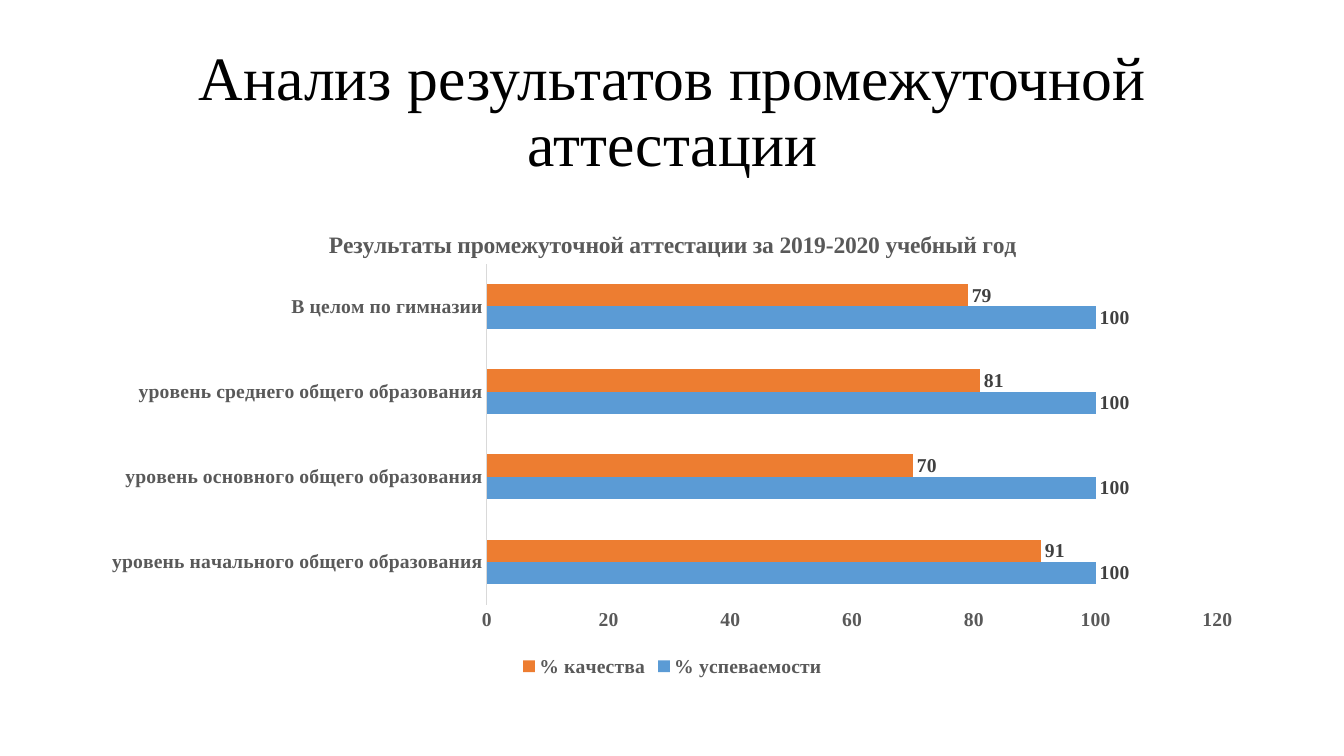
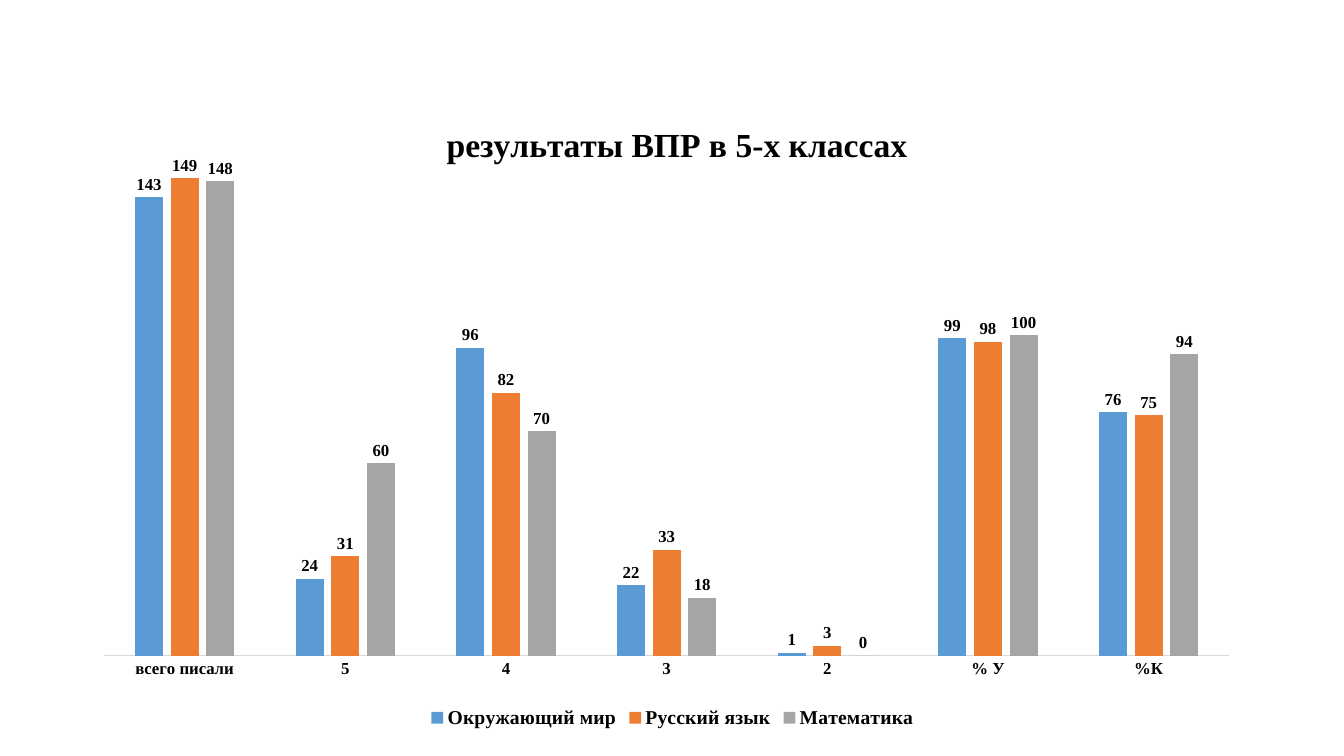
from dataclasses import dataclass

from lxml.etree import SubElement
from pptx import Presentation
from pptx.chart.data import CategoryChartData
from pptx.dml.color import RGBColor
from pptx.enum.chart import (XL_CHART_TYPE, XL_LABEL_POSITION,
                             XL_LEGEND_POSITION, XL_TICK_MARK)
from pptx.enum.text import MSO_ANCHOR, PP_ALIGN
from pptx.oxml.ns import qn
from pptx.util import Inches, Pt

TITLE_ONLY, BLANK = 5, 6


@dataclass(frozen=True)
class Theme:
    font: str = "Times New Roman"
    black: str = "000000"
    dark_gray: str = "404040"
    gray: str = "595959"
    axis_line: str = "D9D9D9"
    blue: str = "5B9BD5"
    orange: str = "ED7D31"
    silver: str = "A5A5A5"
    title_size: float = 44
    large_heading_size: float = 24
    heading_size: float = 16.8
    text_size: float = 14
    small_size: float = 12


THEME = Theme()


def set_attributes(target, values):
    for name, value in values.items():
        setattr(target, name, value)


def set_layout(parent, index, fractions, inner=False):
    """Place a chart part by fractions of the chart: x, y and optionally w, h."""
    for old_layout in parent.findall(qn("c:layout")):
        parent.remove(old_layout)
    layout = SubElement(parent, qn("c:layout"))
    parent.insert(index, layout)
    manual = SubElement(layout, qn("c:manualLayout"))
    settings = [("layoutTarget", "inner")] if inner else []
    settings += [("xMode", "edge"), ("yMode", "edge")]
    settings += zip("xywh", fractions)
    for name, value in settings:
        SubElement(manual, qn(f"c:{name}")).set("val", str(value))


class Deck:
    LEFT, WIDTH = Inches(0.92), Inches(11.5)

    def __init__(self, theme):
        self.theme = theme
        self.presentation = Presentation()
        set_attributes(self.presentation, {
            "slide_width": Inches(13.33), "slide_height": Inches(7.5)})
        self.slide = None

    def add_slide(self, layout):
        layouts = self.presentation.slide_layouts
        self.slide = self.presentation.slides.add_slide(layouts[layout])

    def style_font(self, font, size, color, bold=True):
        set_attributes(font, {
            "name": self.theme.font, "size": Pt(size), "bold": bold})
        font.color.rgb = RGBColor.from_string(color)

    def title(self, text):
        placeholder = self.slide.shapes.title
        set_attributes(placeholder, {
            "left": self.LEFT, "top": Inches(0.4),
            "width": self.WIDTH, "height": Inches(1.45)})
        frame = placeholder.text_frame
        set_attributes(frame, {
            "text": text, "word_wrap": True,
            "vertical_anchor": MSO_ANCHOR.MIDDLE})
        paragraph = frame.paragraphs[0]
        set_attributes(paragraph, {
            "alignment": PP_ALIGN.CENTER, "line_spacing": 0.9})
        self.style_font(paragraph.runs[0].font, self.theme.title_size,
                        self.theme.black, bold=False)

    def chart(self, kind, top, height, categories, series, bars, plot_layout):
        """Add a clustered chart; series holds (name, color, values) rows."""
        data = CategoryChartData(number_format="0")
        data.categories = categories
        for name, _, values in series:
            data.add_series(name, values)
        chart = self.slide.shapes.add_chart(
            kind, self.LEFT, Inches(top), self.WIDTH, Inches(height),
            data).chart
        plot = chart.plots[0]
        set_attributes(plot, {"vary_by_categories": False, **bars})
        for bar_series, (_, color, _) in zip(plot.series, series):
            bar_series.invert_if_negative = False
            bar_series.format.fill.solid()
            bar_series.format.fill.fore_color.rgb = RGBColor.from_string(color)
        set_layout(chart._chartSpace.chart.plotArea, 0, plot_layout, inner=True)
        return chart

    def chart_heading(self, chart, text, size, color, position):
        chart.has_title = True
        heading = chart.chart_title
        heading.text_frame.text = text
        run = heading.text_frame.paragraphs[0].runs[0]
        self.style_font(run.font, size, color)
        set_layout(heading._element, 1, position)

    def axes(self, chart, size, color, maximum, step, show_values):
        value_axis, category_axis = chart.value_axis, chart.category_axis
        set_attributes(value_axis, {
            "minimum_scale": 0, "maximum_scale": maximum, "major_unit": step,
            "has_major_gridlines": False, "visible": show_values})
        value_axis.format.line.fill.background()
        line = category_axis.format.line
        line.width = Pt(0.75)
        line.color.rgb = RGBColor.from_string(self.theme.axis_line)
        for axis in (value_axis, category_axis):
            set_attributes(axis, {
                "major_tick_mark": XL_TICK_MARK.NONE,
                "minor_tick_mark": XL_TICK_MARK.NONE})
            self.style_font(axis.tick_labels.font, size, color)

    def data_labels(self, chart, size, color):
        for bar_series in chart.plots[0].series:
            labels = bar_series.data_labels
            set_attributes(labels, {
                "show_value": True, "number_format": "0",
                "number_format_is_linked": False,
                "position": XL_LABEL_POSITION.OUTSIDE_END})
            self.style_font(labels.font, size, color)

    def legend(self, chart, color):
        chart.has_legend = True
        set_attributes(chart.legend, {
            "position": XL_LEGEND_POSITION.BOTTOM, "include_in_layout": False})
        self.style_font(chart.legend.font, self.theme.text_size, color)


def build_attestation_slide(deck):
    theme = deck.theme
    deck.add_slide(TITLE_ONLY)
    deck.title("Анализ результатов промежуточной аттестации")
    chart = deck.chart(
        XL_CHART_TYPE.BAR_CLUSTERED, 2, 4.76,
        ["уровень начального общего образования",
         "уровень основного общего образования",
         "уровень среднего общего образования",
         "В целом по гимназии"],
        [("% успеваемости", theme.blue, [100, 100, 100, 100]),
         ("% качества", theme.orange, [91, 70, 81, 79])],
        {"gap_width": 182, "overlap": 0}, (0.34, 0.13, 0.63, 0.71))
    deck.chart_heading(
        chart, "Результаты промежуточной аттестации за 2019-2020 учебный год",
        theme.heading_size, theme.gray, (0.2, 0.05))
    deck.axes(chart, theme.text_size, theme.gray, 120, 20, show_values=True)
    deck.data_labels(chart, theme.text_size, theme.dark_gray)
    deck.legend(chart, theme.gray)


def build_test_results_slide(deck):
    theme = deck.theme
    deck.add_slide(BLANK)
    chart = deck.chart(
        XL_CHART_TYPE.COLUMN_CLUSTERED, 0.91, 6.36,
        ["всего писали", "5", "4", "3", "2", "% У", "%К"],
        [("Окружающий мир", theme.blue, [143, 24, 96, 22, 1, 99, 76]),
         ("Русский язык", theme.orange, [149, 31, 82, 33, 3, 98, 75]),
         ("Математика", theme.silver, [148, 60, 70, 18, 0, 100, 94])],
        {"gap_width": 219, "overlap": -27}, (0.01, 0.08, 0.97, 0.8))
    deck.chart_heading(chart, "результаты ВПР в 5-х классах",
                       theme.large_heading_size, theme.black, (0.3, 0.04))
    deck.axes(chart, theme.small_size, theme.black, 160, 20, show_values=False)
    deck.data_labels(chart, theme.small_size, theme.black)
    deck.legend(chart, theme.black)


def main():
    deck = Deck(THEME)
    build_attestation_slide(deck)
    build_test_results_slide(deck)
    deck.presentation.save("out.pptx")


if __name__ == "__main__":
    main()
